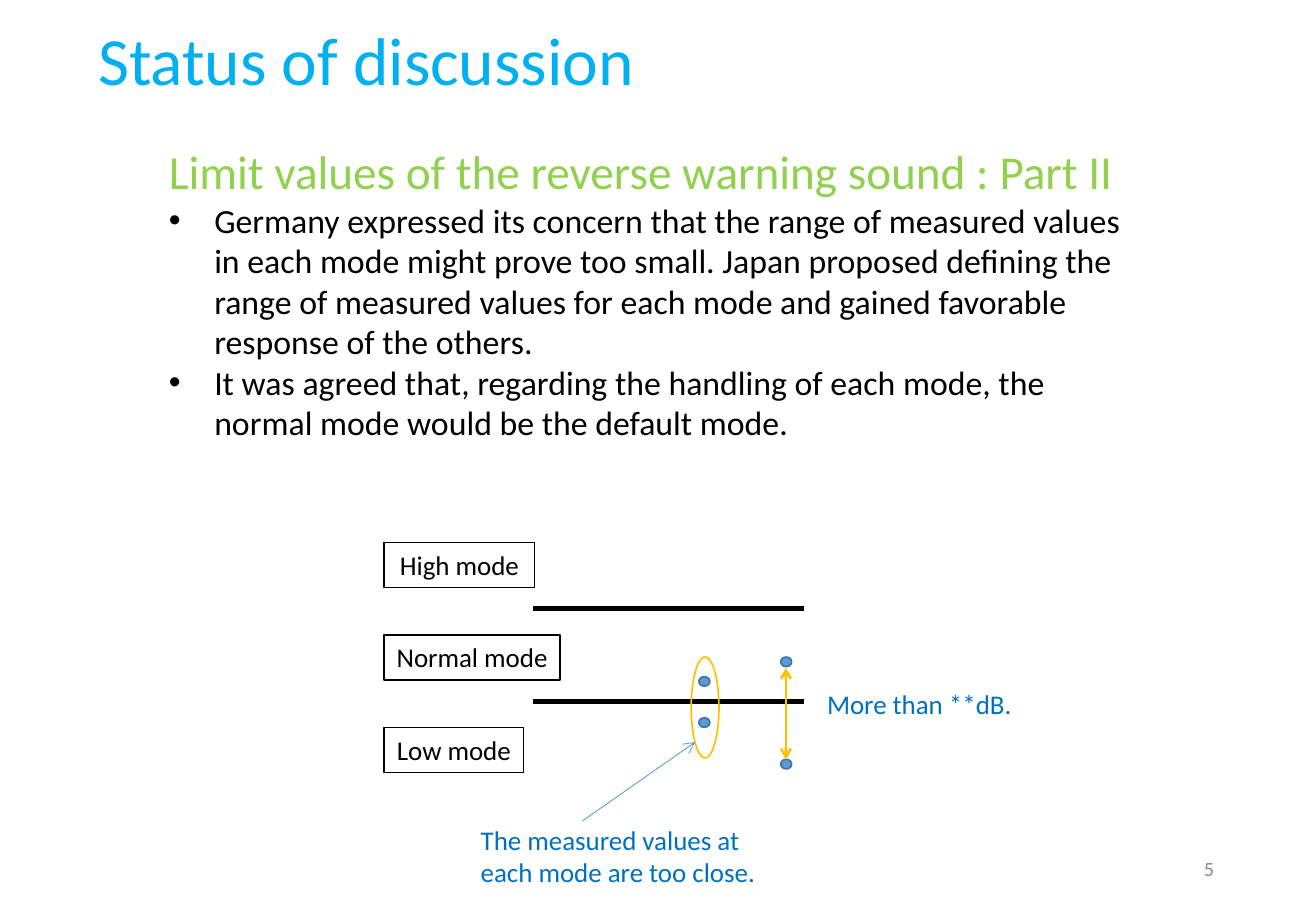
import pptx
import pptx.dml.color
import pptx.enum.shapes
import pptx.enum.text
import pptx.oxml.ns
import pptx.util
from lxml import etree

Cm, Pt = pptx.util.Cm, pptx.util.Pt
qn = pptx.oxml.ns.qn
SHAPE = pptx.enum.shapes.MSO_SHAPE
ALIGN = pptx.enum.text.PP_ALIGN
ANCHOR = pptx.enum.text.MSO_ANCHOR

COLORS = {
    "title": "00B0F0",
    "heading": "92D050",
    "text": "000000",
    "note": "0070C0",
    "number": "8C8C8C",
    "dot": "5B9BD5",
    "dot_edge": "43739E",
    "range": "FFC000",
}
MODES = [("High mode", 3.15), ("Normal mode", 3.68), ("Low mode", 2.92)]
MODE_TOP, MODE_PITCH = 11.35, 1.93
LIMIT_TOP = 12.73
BODY = [
    "Germany expressed its concern that the range of measured values in each "
    "mode might prove too small. Japan proposed defining the range of measured "
    "values for each mode and gained favorable response of the others.",
    "It was agreed that, regarding the handling of each mode, the normal mode "
    "would be the default mode.",
]


def rgb(name):
    return pptx.dml.color.RGBColor.from_string(COLORS[name])


def write(tf, text, size=16, color="text", align=ALIGN.LEFT, bullet=False):
    """Fill the first paragraph if it is empty, otherwise append one."""
    p = tf.paragraphs[0] if not tf.text else tf.add_paragraph()
    p.alignment = align
    if bullet:
        pPr = p._p.get_or_add_pPr()
        pPr.set("marL", str(Cm(0.95)))
        pPr.set("indent", str(-Cm(0.95)))
        etree.SubElement(pPr, qn("a:buFont"), typeface="Arial")
        etree.SubElement(pPr, qn("a:buChar"), char="•")
    r = p.add_run()
    r.text = text
    r.font.name = "Calibri"
    r.font.size = Pt(size)
    r.font.color.rgb = rgb(color)


def text_box(slide, left, top, width, height, anchor=ANCHOR.TOP):
    sp = slide.shapes.add_textbox(Cm(left), Cm(top), Cm(width), Cm(height))
    tf = sp.text_frame
    tf.word_wrap = True
    tf.vertical_anchor = anchor
    return tf


def outlined(slide, kind, left, top, width, height, line, weight, fill=None):
    sp = slide.shapes.add_shape(kind, Cm(left), Cm(top), Cm(width), Cm(height))
    sp.shadow.inherit = False
    if fill:
        sp.fill.solid()
        sp.fill.fore_color.rgb = rgb(fill)
    else:
        sp.fill.background()
    sp.line.color.rgb = rgb(line)
    sp.line.width = Pt(weight)
    return sp


def mode_label(slide, text, top, width):
    sp = outlined(slide, SHAPE.RECTANGLE, 8.03, top, width, 0.94, "text", 0.75)
    tf = sp.text_frame
    tf.word_wrap = False
    tf.vertical_anchor = ANCHOR.TOP
    write(tf, text, align=ALIGN.CENTER)


def dot(slide, left, top):
    outlined(slide, SHAPE.OVAL, left, top, 0.23, 0.2, "dot_edge", 1, fill="dot")


def line(slide, x1, y1, x2, y2, color, weight, heads=()):
    """Draw a straight line; heads may hold headEnd and tailEnd, in that order."""
    cx = slide.shapes.add_connector(
        pptx.enum.shapes.MSO_CONNECTOR.STRAIGHT, Cm(x1), Cm(y1), Cm(x2), Cm(y2))
    cx.line.color.rgb = rgb(color)
    cx.line.width = Pt(weight)
    ln = cx.line._get_or_add_ln()
    for end in heads:
        etree.SubElement(ln, qn("a:" + end), type="arrow")
    etree.SubElement(cx._element.spPr, qn("a:effectLst"))


def add_texts(slide):
    write(text_box(slide, 1.8, 0.25, 20.47, 1.96), "Status of discussion",
          size=40, color="title")
    tf = text_box(slide, 3.28, 2.86, 20.47, 6.59)
    write(tf, "Limit values of the reverse warning sound : Part II",
          size=28, color="heading")
    for text in BODY:
        write(tf, text, size=20, bullet=True)
    write(text_box(slide, 19.43, 17.65, 6.2, 1.02, ANCHOR.MIDDLE), "5",
          size=12, color="number", align=ALIGN.RIGHT)


def add_diagram(slide):
    for i, (text, width) in enumerate(MODES):
        mode_label(slide, text, MODE_TOP + i * MODE_PITCH, width)
    for i in range(len(MODES) - 1):
        y = LIMIT_TOP + i * MODE_PITCH
        line(slide, 11.15, y, 16.8, y, "text", 3)

    for left, top in [(14.61, 14.15), (14.61, 15.01), (16.32, 13.74), (16.32, 15.88)]:
        dot(slide, left, top)
    line(slide, 16.43, 13.97, 16.43, 15.88, "range", 1.5, ("headEnd", "tailEnd"))
    outlined(slide, SHAPE.OVAL, 14.45, 13.74, 0.58, 2.11, "range", 1)

    write(text_box(slide, 17.04, 14.25, 4.75, 0.94), "More than **dB.", color="note")
    write(text_box(slide, 9.8, 17.09, 6.99, 1.63),
          "The measured values at each mode are too close.", color="note")
    line(slide, 12.17, 17.17, 14.53, 15.52, "dot", 0.5, ("tailEnd",))


def main():
    prs = pptx.Presentation()
    prs.slide_width, prs.slide_height = Cm(27.51), Cm(19.05)
    slide = prs.slides.add_slide(prs.slide_layouts[6])
    add_texts(slide)
    add_diagram(slide)
    prs.save("out.pptx")


if __name__ == "__main__":
    main()
